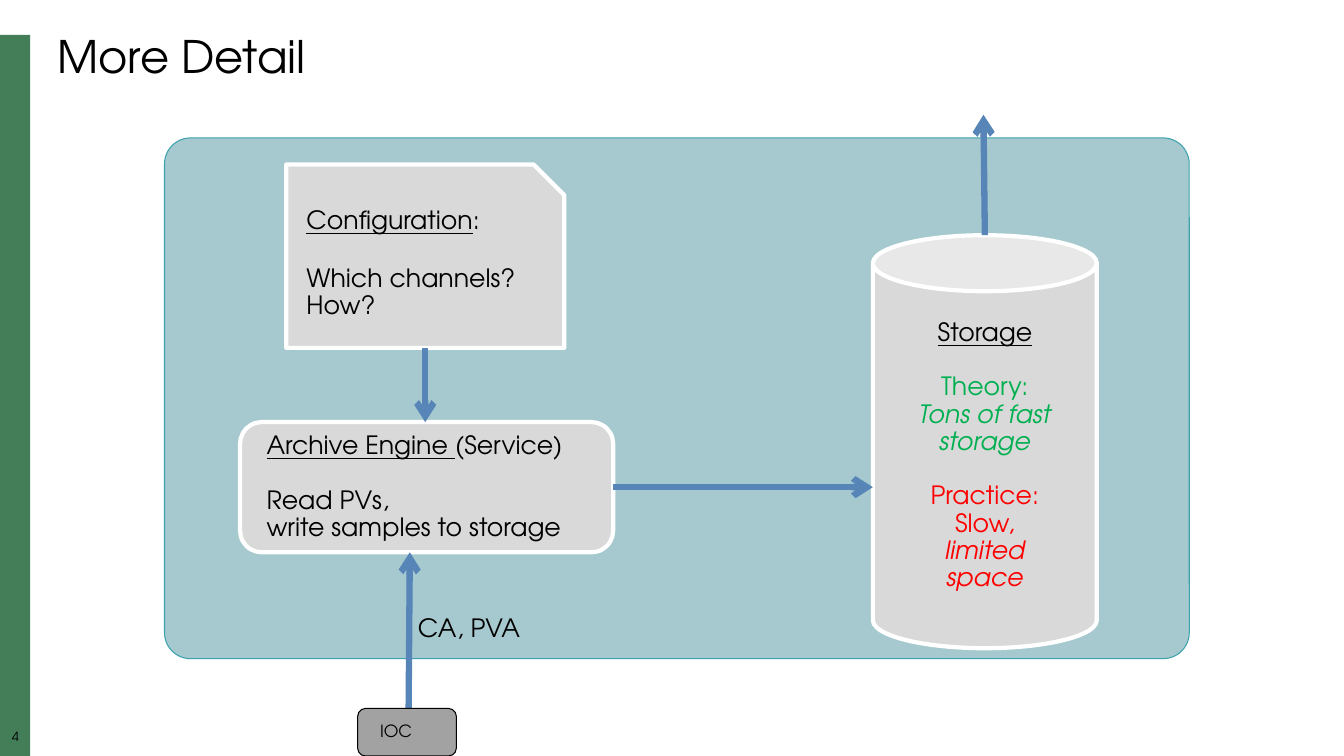
from typing import NamedTuple

from lxml.etree import SubElement
from pptx import Presentation
from pptx.dml.color import RGBColor
from pptx.enum.shapes import MSO_CONNECTOR as Connector, MSO_SHAPE as Shape
from pptx.enum.text import MSO_ANCHOR as Anchor, PP_ALIGN as Align
from pptx.oxml.ns import qn
from pptx.util import Pt

FONT = "TeX Gyre Adventor"
BLACK = RGBColor(0x00, 0x00, 0x00)
WHITE = RGBColor(0xFF, 0xFF, 0xFF)
SIDEBAR_GREEN = RGBColor(0x44, 0x7E, 0x59)
PANEL_TEAL = RGBColor(0xA6, 0xC9, 0xCF)
PANEL_EDGE = RGBColor(0x3B, 0xA2, 0xAD)
NODE_GRAY = RGBColor(0xD9, 0xD9, 0xD9)
IOC_GRAY = RGBColor(0xA2, 0xA2, 0xA2)
ARROW_BLUE = RGBColor(0x57, 0x85, 0xB7)
THEORY_GREEN = RGBColor(0x00, 0xB0, 0x50)
PRACTICE_RED = RGBColor(0xFF, 0x00, 0x00)
LINE_GAP = 19.5


class Box(NamedTuple):
    left: float
    top: float
    width: float
    height: float

    @property
    def right(self):
        return self.left + self.width

    @property
    def bottom(self):
        return self.top + self.height

    @property
    def center(self):
        return self.left + self.width / 2

    @property
    def middle(self):
        return self.top + self.height / 2

    def inner(self, left, top, width, height):
        return Box(self.left + left, self.top + top, width, height)

    def lengths(self):
        return [Pt(value) for value in self]


class Run(NamedTuple):
    text: str
    color: RGBColor = BLACK
    underline: bool = False
    italic: bool = False


def write(frame, paragraphs, size=18, align=Align.LEFT, inset=None, wrap=True):
    frame.word_wrap = wrap
    if inset is not None:
        frame.margin_left = frame.margin_right = Pt(inset)
        frame.margin_top = frame.margin_bottom = Pt(inset)
    for index, (gap, runs) in enumerate(paragraphs):
        paragraph = frame.add_paragraph() if index else frame.paragraphs[0]
        paragraph.alignment = align
        paragraph.line_spacing = 0.9
        paragraph.space_before = Pt(gap)
        for item in runs:
            for number, line in enumerate(item.text.split("\n")):
                if number:
                    paragraph.add_line_break()
                run = paragraph.add_run()
                run.text = line
                run.font.name = FONT
                run.font.size = Pt(size)
                run.font.color.rgb = item.color
                run.font.underline = item.underline
                run.font.italic = item.italic


def add_label(slide, box, text, size, **options):
    frame = slide.shapes.add_textbox(*box.lengths()).text_frame
    write(frame, [(0, [Run(text)])], size, **options)


def add_node(slide, kind, box, fill, edge=None, weight=3.0, paragraphs=(), **options):
    shape = slide.shapes.add_shape(kind, *box.lengths())
    shape.shadow.inherit = False
    shape.fill.solid()
    shape.fill.fore_color.rgb = fill
    if edge is None:
        shape.line.fill.background()
    else:
        shape.line.color.rgb = edge
        shape.line.width = Pt(weight)
    if paragraphs:
        shape.text_frame.vertical_anchor = Anchor.MIDDLE
        write(shape.text_frame, paragraphs, inset=14.4, **options)
    return shape


def add_arrow(slide, *ends):
    arrow = slide.shapes.add_connector(Connector.STRAIGHT, *[Pt(end) for end in ends])
    arrow.line.color.rgb = ARROW_BLUE
    arrow.line.width = Pt(4.5)
    properties = arrow.element.spPr
    SubElement(properties.find(qn("a:ln")), qn("a:tailEnd"), type="arrow")
    SubElement(properties, qn("a:effectLst"))


def add_sidebar(slide, box, number):
    add_node(slide, Shape.RECTANGLE, box, SIDEBAR_GREEN)
    add_label(slide, box.inner(0, box.height - 18, 22, 12), number, 9,
              align=Align.CENTER, inset=0)


def add_storage(slide, box):
    add_node(slide, Shape.CAN, box, NODE_GRAY, WHITE, align=Align.CENTER, paragraphs=[
        (0, [Run("Storage", underline=True)]),
        (LINE_GAP, [Run("Theory:\n", THEORY_GREEN),
                    Run("Tons of fast storage", THEORY_GREEN, italic=True)]),
        (LINE_GAP, [Run("Practice:\nSlow,\n", PRACTICE_RED),
                    Run("limited\nspace", PRACTICE_RED, italic=True)]),
    ])


def add_engine(slide, box):
    add_node(slide, Shape.ROUNDED_RECTANGLE, box, NODE_GRAY, WHITE, paragraphs=[
        (0, [Run("Archive Engine ", underline=True), Run("(Service)")]),
        (LINE_GAP, [Run("Read PVs,\nwrite samples to storage")]),
    ])


def add_configuration(slide, box):
    add_node(slide, Shape.SNIP_1_RECTANGLE, box, NODE_GRAY, WHITE, paragraphs=[
        (0, [Run("Configuration", underline=True), Run(":")]),
        (22, [Run("Which channels?\nHow?")]),
    ])


def add_archive_diagram(slide, panel):
    storage = panel.inner(506, 69.5, 160, 295)
    engine = panel.inner(54, 203, 266.5, 93)
    configuration = panel.inner(87, 19, 198.5, 131)
    ioc = panel.inner(138, 407.5, 70.5, 34)

    backdrop = add_node(slide, Shape.ROUNDED_RECTANGLE, panel, PANEL_TEAL, PANEL_EDGE, 0.75)
    backdrop.adjustments[0] = 0.05
    add_storage(slide, storage)
    add_engine(slide, engine)
    add_configuration(slide, configuration)

    source = ioc.center + 1
    add_arrow(slide, source, ioc.middle, source + 1, engine.bottom)
    add_arrow(slide, engine.right, engine.middle, storage.left, engine.middle)
    add_arrow(slide, configuration.center, configuration.bottom,
              configuration.center, engine.top)
    add_arrow(slide, storage.center, storage.top, storage.center - 1, panel.top - 16.5)

    add_label(slide, panel.inner(174, 338, 90, 26.5), "CA, PVA", 18, wrap=False)
    add_node(slide, Shape.ROUNDED_RECTANGLE, ioc, IOC_GRAY, BLACK, 0.75,
             [(0, [Run("IOC")])], size=12)


def main():
    presentation = Presentation()
    presentation.slide_width = Pt(960)
    presentation.slide_height = Pt(540)
    slide = presentation.slides.add_slide(presentation.slide_layouts[6])
    add_sidebar(slide, Box(0, 25, 21.5, 515), "4")
    add_label(slide, Box(34, 21.5, 900, 42.5), "More Detail", 32)
    add_archive_diagram(slide, Box(117.5, 98.5, 732, 372))
    presentation.save("out.pptx")


if __name__ == "__main__":
    main()
